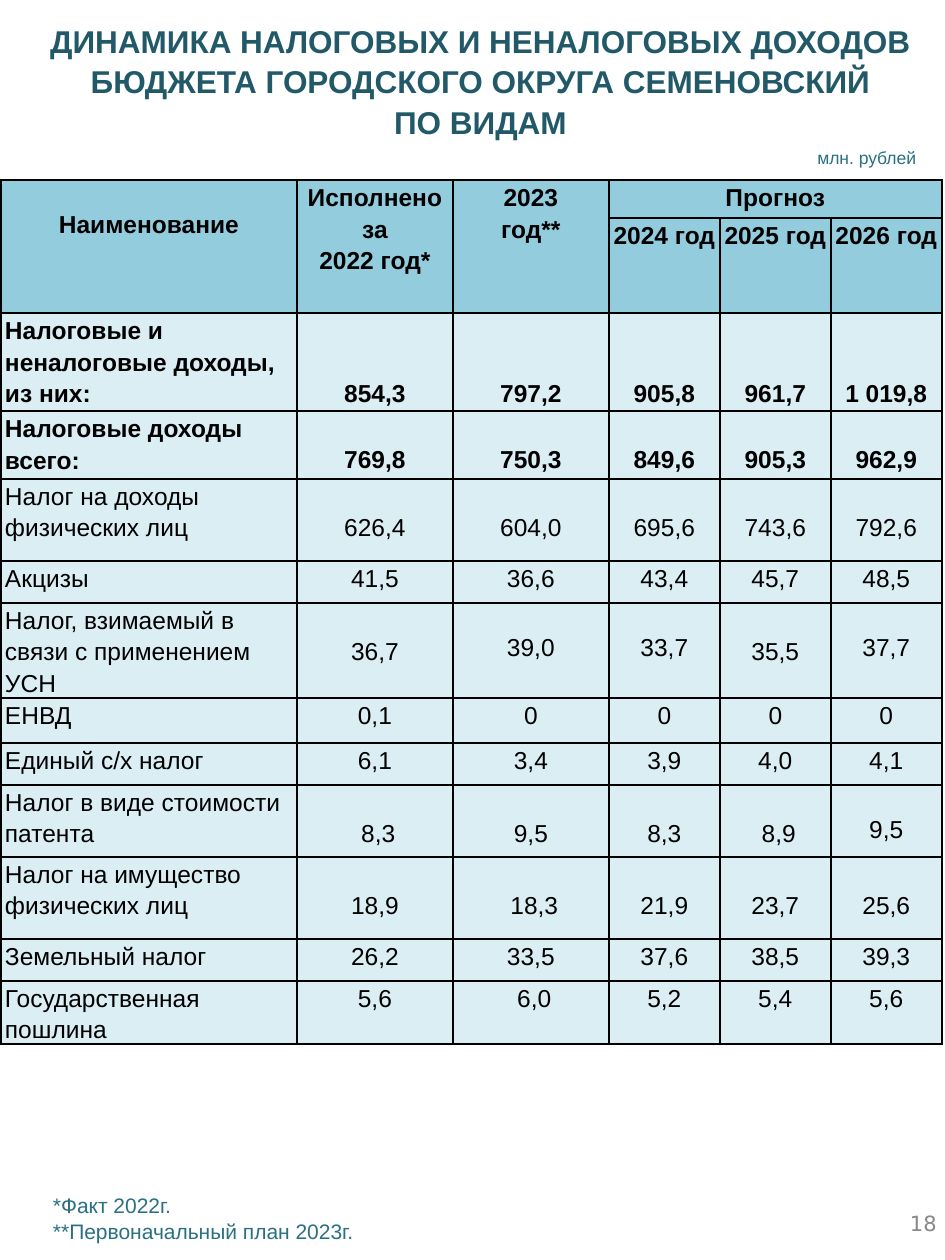
from dataclasses import dataclass
from lxml import etree
from pptx import Presentation
from pptx.dml.color import RGBColor
from pptx.enum.text import MSO_ANCHOR as Anchor, MSO_AUTO_SIZE as AutoSize, PP_ALIGN as Align
from pptx.oxml.ns import qn
from pptx.util import Emu, Pt

EMU_PER_PX = 914400 / 126


def px(length):
    return Emu(round(length * EMU_PER_PX))


@dataclass(frozen=True)
class Theme:
    font: str = "Arial"
    number_font: str = "DejaVu Sans"
    title: str = "215968"
    note: str = "297083"
    number: str = "888888"
    ink: str = "000000"
    header_fill: str = "93CDDD"
    body_fill: str = "DBEEF4"
    title_size: int = 18
    table_size: int = 14
    note_size: int = 12
    unit_size: int = 10
    title_spacing: float = 1.05
    table_spacing: float = 1.15
    border: int = 1


class SlideBuilder:
    def __init__(self, slide, theme):
        self.slide = slide
        self.theme = theme

    def set_text(self, frame, text, size, color, bold=False, align=Align.LEFT,
                 spacing=None, indent=0, font=None):
        frame.text = text
        for paragraph in frame.paragraphs:
            if indent:
                paragraph._p.get_or_add_pPr().set("indent", str(px(indent)))
            paragraph.alignment = align
            paragraph.line_spacing = spacing
            paragraph.font.name = font or self.theme.font
            paragraph.font.size = Pt(size)
            paragraph.font.bold = bold
            paragraph.font.color.rgb = RGBColor.from_string(color)

    def set_margins(self, target, left, top, right, bottom):
        target.margin_left, target.margin_top = px(left), px(top)
        target.margin_right, target.margin_bottom = px(right), px(bottom)

    def title(self, text, left, top, width, height):
        shape = self.slide.shapes.title
        shape.left, shape.top = px(left), px(top)
        shape.width, shape.height = px(width), px(height)
        frame = shape.text_frame
        self.set_margins(frame, 0, 1, 0, 0)
        frame.auto_size = AutoSize.NONE
        frame.word_wrap = True
        frame.vertical_anchor = Anchor.TOP
        self.set_text(frame, text, self.theme.title_size, self.theme.title, True,
                      Align.CENTER, self.theme.title_spacing)
        for paragraph in frame.paragraphs[1:]:
            paragraph.space_before = Pt(1)

    def text_box(self, text, box, size, color, margins, **style):
        shape = self.slide.shapes.add_textbox(*map(px, box))
        shape.text_frame.word_wrap = True
        self.set_margins(shape.text_frame, *margins)
        self.set_text(shape.text_frame, text, size, color, **style)

    def table(self, left, top, height, widths, heights):
        frame = self.slide.shapes.add_table(
            len(heights), len(widths), px(left), px(top), px(sum(widths)), px(height))
        table = frame.table
        table.first_row = table.horz_banding = False
        for column, width in zip(table.columns, widths):
            column.width = px(width)
        for row, row_height in zip(table.rows, heights):
            row.height = px(row_height)
        frame.height = px(height)
        return table

    def cell(self, cell, text, fill, bold=False, align=Align.CENTER, lead=0):
        self.set_margins(cell, 4, lead, 4, 0)
        cell.vertical_anchor = Anchor.TOP
        self.set_text(cell.text_frame, text, self.theme.table_size, self.theme.ink,
                      bold, align, self.theme.table_spacing)
        cell.fill.solid()
        cell.fill.fore_color.rgb = RGBColor.from_string(fill)
        properties = cell._tc.get_or_add_tcPr()
        for position, side in enumerate(("lnL", "lnR", "lnT", "lnB")):
            line = etree.Element(qn(f"a:{side}"), w=str(Pt(self.theme.border)))
            solid = etree.SubElement(line, qn("a:solidFill"))
            etree.SubElement(solid, qn("a:srgbClr"), val=self.theme.ink)
            properties.insert(position, line)


NAME_LEAD, ONE_LINE, TWO_LINES = 27, 31, 63
COLUMN_WIDTHS = [296, 156, 156, 111, 111, 111]
ROW_HEIGHTS = [38, 64, 98, 68, 82, 42, 77, 45, 42, 72, 82, 42, 44]
HEADER = [
    ["Наименование", "Исполнено за\n2022 год*", "2023\nгод**", "Прогноз", "", ""],
    ["", "", "", "2024 год", "2025 год", "2026 год"],
]
REVENUES = [
    ("Налоговые и неналоговые доходы, из них:",
     ["854,3", "797,2", "905,8", "961,7", "1 019,8"], [TWO_LINES] * 5),
    ("Налоговые доходы всего:",
     ["769,8", "750,3", "849,6", "905,3", "962,9"], [ONE_LINE] * 5),
    ("Налог на доходы физических лиц",
     ["626,4", "604,0", "695,6", "743,6", "792,6"], [ONE_LINE] * 5),
    ("Акцизы", ["41,5", "36,6", "43,4", "45,7", "48,5"], [0] * 5),
    ("Налог, взимаемый в связи с применением УСН",
     ["36,7", "39,0", "33,7", "35,5", "37,7"],
     [ONE_LINE, NAME_LEAD, NAME_LEAD, ONE_LINE, NAME_LEAD]),
    ("ЕНВД", ["0,1", "0", "0", "0", "0"], [0] * 5),
    ("Единый с/х налог", ["6,1", "3,4", "3,9", "4,0", "4,1"], [0] * 5),
    ("Налог в виде стоимости патента",
     [" 8,3", "9,5", "8,3", " 8,9", "9,5"], [ONE_LINE] * 4 + [NAME_LEAD]),
    ("Налог на имущество физических лиц",
     ["18,9", " 18,3", "21,9", "23,7", "25,6"], [ONE_LINE] * 5),
    ("Земельный налог", ["26,2", "33,5", "37,6", "38,5", "39,3"], [0] * 5),
    ("Государственная пошлина", ["5,6", " 6,0", "5,2", "5,4", "5,6"], [0] * 5),
]
TOTAL_ROWS = 2


def add_revenue_table(builder):
    theme = builder.theme
    table = builder.table(1, 180, 837, COLUMN_WIDTHS, ROW_HEIGHTS)
    for row, texts in enumerate(HEADER):
        for column, text in enumerate(texts):
            lead = NAME_LEAD if (row, column) == (0, 0) else 0
            builder.cell(table.cell(row, column), text, theme.header_fill, True, lead=lead)
    for column in range(3):
        table.cell(0, column).merge(table.cell(1, column))
    table.cell(0, 3).merge(table.cell(0, 5))
    for index, (name, values, leads) in enumerate(REVENUES):
        row = index + len(HEADER)
        bold = index < TOTAL_ROWS
        builder.cell(table.cell(row, 0), name, theme.body_fill, bold, Align.LEFT)
        for column, (value, lead) in enumerate(zip(values, leads), 1):
            builder.cell(table.cell(row, column), value, theme.body_fill, bold, lead=lead)


def main():
    theme = Theme()
    presentation = Presentation()
    presentation.slide_width, presentation.slide_height = px(945), px(1260)
    slide = presentation.slides.add_slide(presentation.slide_layouts[5])
    builder = SlideBuilder(slide, theme)
    add_revenue_table(builder)
    builder.title("ДИНАМИКА НАЛОГОВЫХ И НЕНАЛОГОВЫХ ДОХОДОВ БЮДЖЕТА ГОРОДСКОГО "
                  "ОКРУГА СЕМЕНОВСКИЙ\nПО ВИДАМ", 33, 19, 895, 118)
    builder.text_box("*Факт 2022г.\n**Первоначальный план 2023г.", (-26, 1187, 772, 63),
                     theme.note_size, theme.note, (13, 6, 13, 6), indent=66)
    builder.text_box("млн. рублей", (779, 137, 137, 30), theme.unit_size, theme.note,
                     (0, 10, 0, 0), align=Align.RIGHT)
    builder.text_box("18", (902, 1211, 39, 32), theme.note_size, theme.number,
                     (8, 0, 0, 0), font=theme.number_font)
    presentation.save("out.pptx")


if __name__ == "__main__":
    main()
